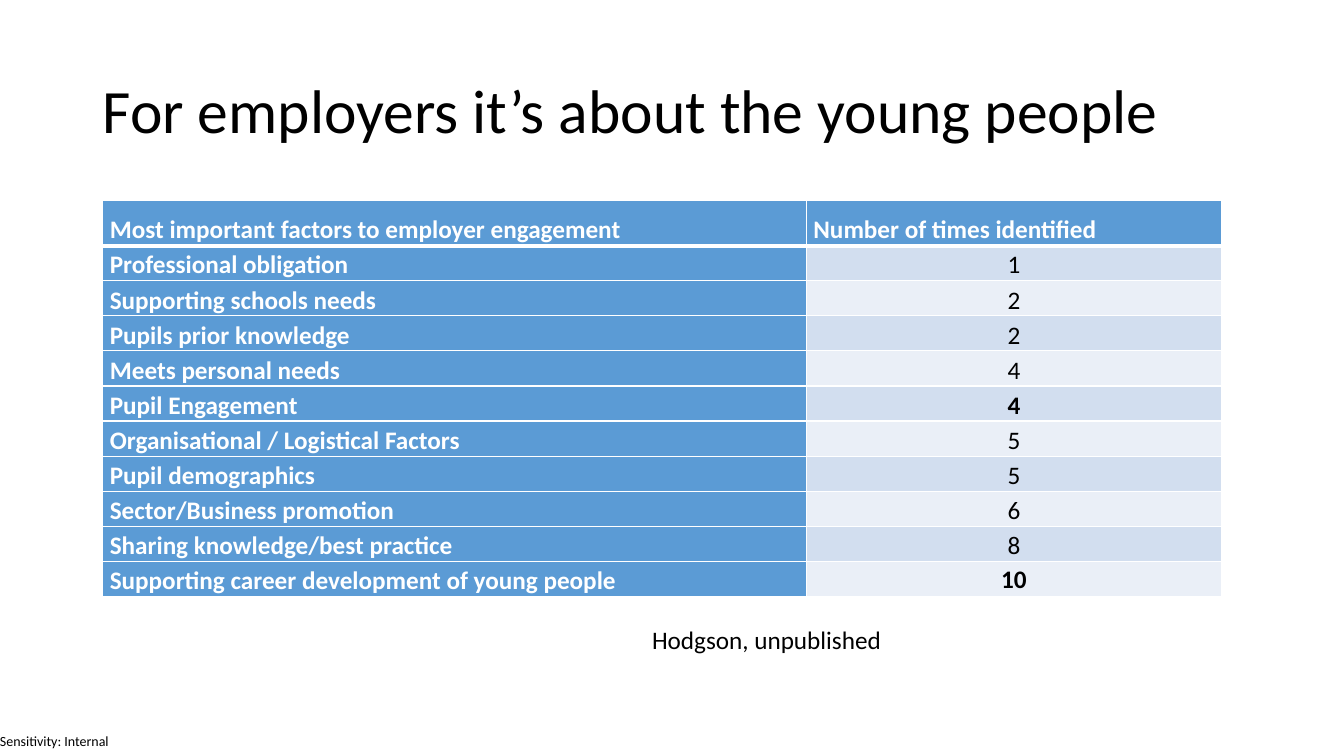
from dataclasses import dataclass

from lxml import etree
from pptx import Presentation
from pptx.dml.color import RGBColor
from pptx.enum.text import MSO_ANCHOR, MSO_AUTO_SIZE, PP_ALIGN
from pptx.oxml.ns import qn
from pptx.util import Pt

LEFT, MID = PP_ALIGN.LEFT, PP_ALIGN.CENTER
TOP, HALF, LOW = MSO_ANCHOR.TOP, MSO_ANCHOR.MIDDLE, MSO_ANCHOR.BOTTOM
FIT, FIXED = MSO_AUTO_SIZE.SHAPE_TO_FIT_TEXT, MSO_AUTO_SIZE.NONE

HUES = {
    "ink": "000000",
    "white": "FFFFFF",
    "blue": "5B9BD5",
    "odd": "D2DEEF",
    "even": "EAEFF7",
}


@dataclass
class Label:
    text: str
    box: tuple[float, float, float, float]
    size: float
    anchor: int = TOP
    pads: tuple[float, float] = (7.2, 3.6)
    space: float = 1.0
    wrap: bool = True
    fit: int = FIT


@dataclass
class Factor:
    name: str
    count: str
    bold: bool = False
    anchor: int = LOW


LABELS = [
    Label("Sensitivity: Internal", (0, 519.12, 100.8, 20.88), 10,
          anchor=HALF, pads=(0, 0), wrap=False),
    Label("For employers it’s about the young people", (66.24, 28.8, 828, 104.4), 44,
          anchor=HALF, space=0.9, fit=FIXED),
    Label("Hodgson, unpublished", (458.64, 442.08, 416.88, 28.8), 18),
]

HEADS = ("Most important factors to employer engagement", "Number of times identified")
FACTORS = [
    Factor("Professional obligation", "1"),
    Factor("Supporting schools needs", "2"),
    Factor("Pupils prior knowledge", "2"),
    Factor("Meets personal needs", "4"),
    Factor("Pupil Engagement", "4", bold=True),
    Factor("Organisational / Logistical Factors", "5"),
    Factor("Pupil demographics", "5"),
    Factor("Sector/Business promotion", "6"),
    Factor("Sharing knowledge/best practice", "8"),
    Factor("Supporting career development of young people", "10", bold=True, anchor=HALF),
]

GRID_X, GRID_Y = 73.44, 143.28
WIDTHS = (502.56, 296.64)
HEAD_H, ROW_H = 32.2, 25.07


def color(hue: str) -> RGBColor:
    return RGBColor.from_string(HUES[hue])


def apply(target, form: dict) -> None:
    for key, value in form.items():
        setattr(target, key, value)


def write(para, text: str, size: float, hue: str, bold: bool, align, space: float) -> None:
    apply(para, {"alignment": align, "line_spacing": space})
    run = para.add_run()
    run.text = text
    apply(run.font, {"name": "Calibri", "size": Pt(size), "bold": bold})
    run.font.color.rgb = color(hue)


def add_label(slide, label: Label) -> None:
    frame = slide.shapes.add_textbox(*map(Pt, label.box)).text_frame
    side, edge = map(Pt, label.pads)
    apply(frame, {
        "margin_left": side, "margin_right": side,
        "margin_top": edge, "margin_bottom": edge,
        "word_wrap": label.wrap, "auto_size": label.fit,
        "vertical_anchor": label.anchor,
    })
    write(frame.paragraphs[0], label.text, label.size, "ink", False, LEFT, label.space)


def add_rules(cell, top: float, low: float) -> None:
    props = cell._tc.get_or_add_tcPr()
    for side, width in (("L", 1), ("R", 1), ("T", top), ("B", low)):
        line = etree.SubElement(props, qn(f"a:ln{side}"), w=str(Pt(width)))
        fill = etree.SubElement(line, qn("a:solidFill"))
        etree.SubElement(fill, qn("a:srgbClr"), val=HUES["white"])


def add_cell(cell, text: str, row: int, fill: str, hue: str, bold: bool, align, anchor) -> None:
    add_rules(cell, top=3 if row == 1 else 1, low=3 if row == 0 else 1)
    cell.fill.solid()
    cell.fill.fore_color.rgb = color(fill)
    apply(cell, {
        "margin_left": Pt(5.04), "margin_right": Pt(5.04),
        "margin_top": 0, "margin_bottom": 0, "vertical_anchor": anchor,
    })
    write(cell.text_frame.paragraphs[0], text, 18, hue, bold, align, 1.07)


def add_grid(slide) -> None:
    rows = len(FACTORS) + 1
    high = HEAD_H + ROW_H * len(FACTORS)
    table = slide.shapes.add_table(
        rows, len(HEADS), Pt(GRID_X), Pt(GRID_Y), Pt(sum(WIDTHS)), Pt(high)).table
    for col, width in zip(table.columns, WIDTHS):
        col.width = Pt(width)
    for i, row in enumerate(table.rows):
        row.height = Pt(ROW_H if i else HEAD_H)

    # Header row
    for col, head in enumerate(HEADS):
        add_cell(table.cell(0, col), head, 0, "blue", "white", True, LEFT, LOW)

    # Factors with their counts
    for i, item in enumerate(FACTORS, 1):
        band = "odd" if i % 2 else "even"
        add_cell(table.cell(i, 0), item.name, i, "blue", "white", True, LEFT, LOW)
        add_cell(table.cell(i, 1), item.count, i, band, "ink", item.bold, MID, item.anchor)


def main() -> None:
    deck = Presentation()
    apply(deck, {"slide_width": Pt(960), "slide_height": Pt(540)})
    slide = deck.slides.add_slide(deck.slide_layouts[6])
    mark, title, credit = LABELS
    add_label(slide, mark)
    add_label(slide, title)
    add_grid(slide)
    add_label(slide, credit)
    deck.save("out.pptx")


if __name__ == "__main__":
    main()
